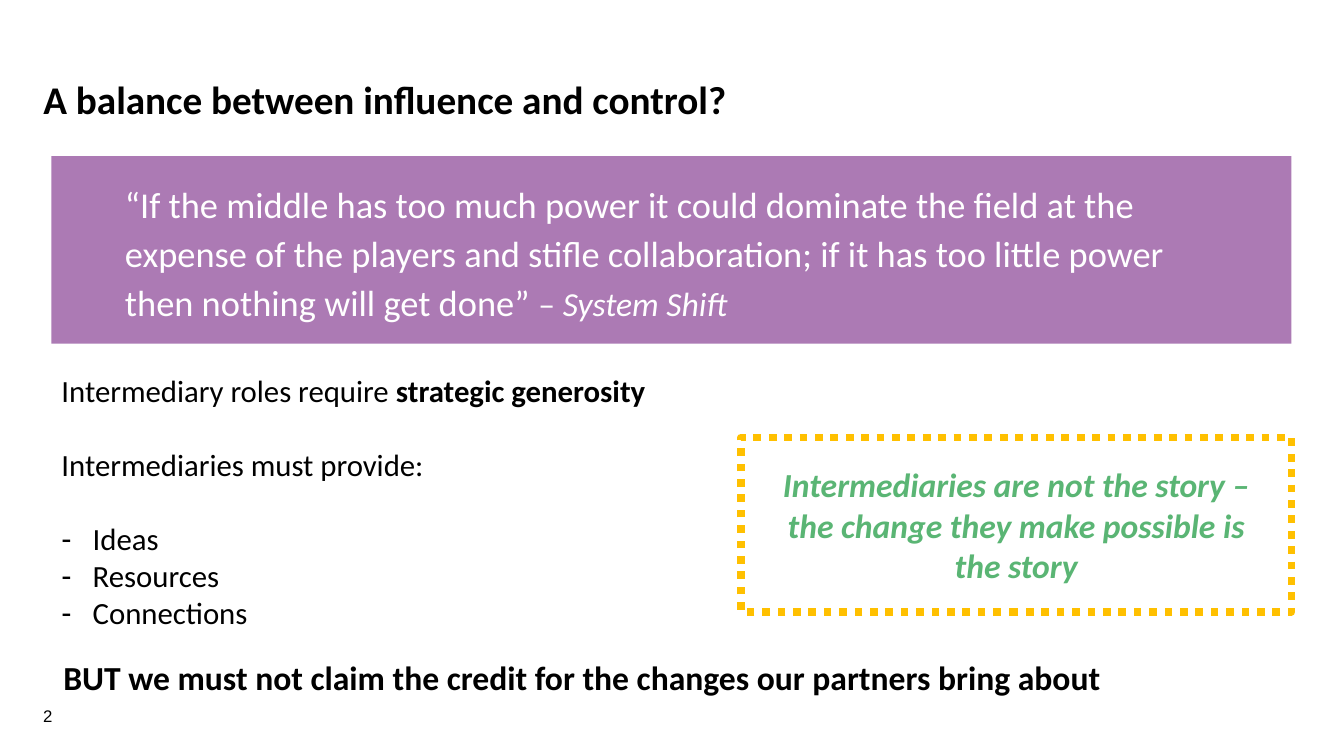
import pptx
import pptx.dml.color
import pptx.enum.dml
import pptx.enum.shapes
import pptx.enum.text
import pptx.util
from lxml import etree
from pptx.oxml.ns import qn
from pptx.util import Inches, Pt

COLORS = {
    "black": "000000",
    "white": "FFFFFF",
    "purple": "AC7AB4",
    "amber": "FFC000",
    "green": "5AB574",
}
ANCHOR = pptx.enum.text.MSO_ANCHOR
ALIGN = pptx.enum.text.PP_ALIGN


def color(name):
    return pptx.dml.color.RGBColor.from_string(COLORS[name])


def place(shape, left, top, width, height):
    shape.left, shape.top = Inches(left), Inches(top)
    shape.width, shape.height = Inches(width), Inches(height)


def set_frame(shape, anchor, horizontal=0.1, vertical=0.05):
    """Wrap the text at a fixed size, with the given anchor and insets in inches."""
    frame = shape.text_frame
    frame.word_wrap = True
    frame.auto_size = pptx.enum.text.MSO_AUTO_SIZE.NONE
    frame.vertical_anchor = anchor
    frame.margin_left = frame.margin_right = Inches(horizontal)
    frame.margin_top = frame.margin_bottom = Inches(vertical)
    return frame


def set_font(paragraph, size, color_name="black", bold=False, italic=False, name="Calibri"):
    font = paragraph.font
    font.name, font.size = name, Pt(size)
    font.bold, font.italic = bold, italic
    font.color.rgb = color(color_name)


def set_bullet(paragraph, character=None, indent=0):
    """Give the paragraph a hanging bullet, or none when there is no character."""
    properties = paragraph._p.get_or_add_pPr()
    properties.set("marL", str(Inches(indent)))
    properties.set("indent", str(-Inches(indent)))
    if character:
        etree.SubElement(properties, qn("a:buChar")).set("char", character)
    else:
        etree.SubElement(properties, qn("a:buNone"))


def add_title(slide, text):
    title = slide.shapes.title
    place(title, 0.33, 0.74, 11.5, 0.54)
    paragraph = set_frame(title, ANCHOR.MIDDLE).paragraphs[0]
    paragraph.text = text
    paragraph.alignment = ALIGN.LEFT
    paragraph.line_spacing = 0.9
    set_font(paragraph, 28, bold=True)


def add_roles(slide, items):
    """Fill the body with (runs, bullet, space before) items; every second run is bold."""
    body = slide.placeholders[1]
    place(body, 0.51, 3.64, 6.6, 2.8)
    frame = set_frame(body, ANCHOR.TOP)
    for index, (texts, bullet, space_before) in enumerate(items):
        paragraph = frame.add_paragraph() if index else frame.paragraphs[0]
        set_bullet(paragraph, bullet, 0.31 if bullet else 0)
        paragraph.space_before = Pt(space_before)
        set_font(paragraph, 22)
        for position, text in enumerate(texts):
            run = paragraph.add_run()
            run.text = text
            if position % 2:
                run.font.bold = True


def add_panel(slide, left, top, width, height, fill):
    panel = slide.shapes.add_shape(
        pptx.enum.shapes.MSO_SHAPE.RECTANGLE,
        Inches(left), Inches(top), Inches(width), Inches(height))
    panel.shadow.inherit = False
    panel.fill.solid()
    panel.fill.fore_color.rgb = color(fill)
    panel.line.fill.background()
    return panel


def add_quote(slide, quote, dash, source):
    panel = add_panel(slide, 0.51, 1.55, 12.3, 1.86, "purple")
    paragraph = set_frame(panel, ANCHOR.MIDDLE, 0.73, 0.1).paragraphs[0]
    paragraph.alignment = ALIGN.LEFT
    paragraph.line_spacing = 1.12
    set_font(paragraph, 26, "white")
    for text, size, italic in ((quote, 26, False), (dash, 24, False), (source, 24, True)):
        run = paragraph.add_run()
        run.text = text
        run.font.size, run.font.italic = Pt(size), italic


def add_callout(slide, text):
    panel = add_panel(slide, 7.35, 4.34, 5.46, 1.73, "white")
    panel.line.color.rgb = color("amber")
    panel.line.width = Pt(5.5)
    panel.line.dash_style = pptx.enum.dml.MSO_LINE.ROUND_DOT
    paragraph = set_frame(panel, ANCHOR.MIDDLE, 0.24, 0.24).paragraphs[0]
    paragraph.text = text
    paragraph.alignment = ALIGN.CENTER
    set_font(paragraph, 24, "green", bold=True, italic=True)


def add_text(slide, text, left, top, width, height, size, **font):
    box = slide.shapes.add_textbox(Inches(left), Inches(top), Inches(width), Inches(height))
    paragraph = set_frame(box, ANCHOR.TOP).paragraphs[0]
    paragraph.text = text
    set_font(paragraph, size, **font)


def main():
    presentation = pptx.Presentation()
    presentation.slide_width, presentation.slide_height = Inches(13.33), Inches(7.5)
    slide = presentation.slides.add_slide(presentation.slide_layouts[1])

    add_title(slide, "A balance between influence and control?")
    add_roles(slide, [
        (["Intermediary roles require ", "strategic generosity"], None, 0),
        (["Intermediaries must provide:"], None, 26.5),
        (["Ideas"], "-", 26.5),
        (["Resources"], "-", 0),
        (["Connections"], "-", 0),
    ])
    add_quote(
        slide,
        "“If the middle has too much power it could dominate the field at the expense of "
        "the players and stifle collaboration; if it has too little power then nothing "
        "will get done” ",
        "– ", "System Shift")
    add_callout(
        slide, "Intermediaries are not the story – the change they make possible is the story")
    add_text(
        slide, "BUT we must not claim the credit for the changes our partners bring about",
        0.53, 6.47, 12.3, 0.5, 24, bold=True)
    add_text(slide, "2", 0.33, 6.95, 0.58, 0.3, 12, name="Arial")

    presentation.save("out.pptx")


if __name__ == "__main__":
    main()
